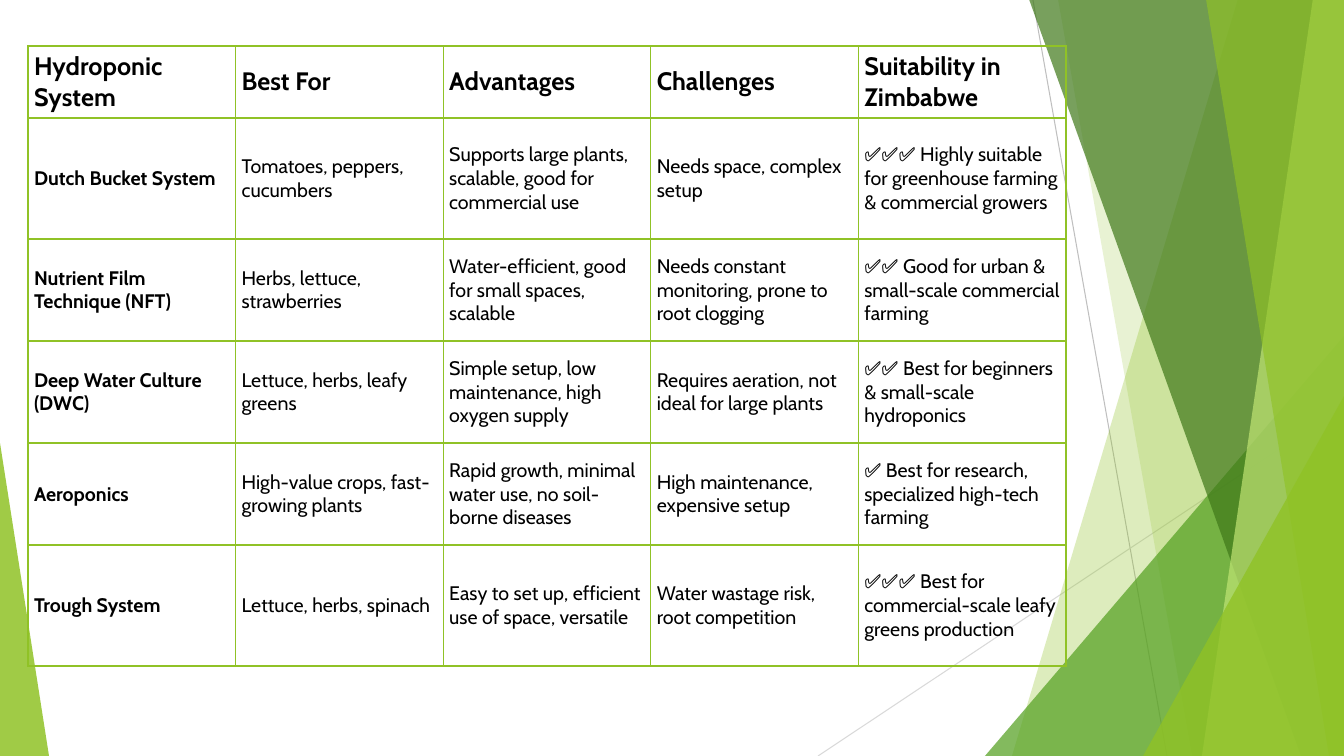
import dataclasses

import lxml.etree
import pptx
import pptx.dml.color
import pptx.enum.shapes
import pptx.enum.text
import pptx.oxml.ns
import pptx.util

WIDTH, HEIGHT = 1344, 756
EMU_PER_PX = 914400 / 100.8

SYSTEMS = [
    ["Hydroponic System", "Best For", "Advantages", "Challenges", "Suitability in Zimbabwe"],
    ["Dutch Bucket System", "Tomatoes, peppers, cucumbers",
     "Supports large plants, scalable, good for commercial use",
     "Needs space, complex setup",
     "✅✅✅ Highly suitable for greenhouse farming & commercial growers"],
    ["Nutrient Film Technique (NFT)", "Herbs, lettuce, strawberries",
     "Water-efficient, good for small spaces, scalable",
     "Needs constant monitoring, prone to root clogging",
     "✅✅ Good for urban & small-scale commercial farming"],
    ["Deep Water Culture (DWC)", "Lettuce, herbs, leafy greens",
     "Simple setup, low maintenance, high oxygen supply",
     "Requires aeration, not ideal for large plants",
     "✅✅ Best for beginners & small-scale hydroponics"],
    ["Aeroponics", "High-value crops, fast-growing plants",
     "Rapid growth, minimal water use, no soil-borne diseases",
     "High maintenance, expensive setup",
     "✅ Best for research, specialized high-tech farming"],
    ["Trough System", "Lettuce, herbs, spinach",
     "Easy to set up, efficient use of space, versatile",
     "Water wastage risk, root competition",
     "✅✅✅ Best for commercial-scale leafy greens production"],
]
ROW_HEIGHTS = [72, 121, 102, 102, 102, 121]


@dataclasses.dataclass(frozen=True)
class Theme:
    font: str = "Cabin"
    text: str = "000000"
    lime: str = "90C226"
    green: str = "54A021"
    forest: str = "3F7819"
    pale: str = "C0E474"
    grey: str = "BFBFBF"
    light_grey: str = "D9D9D9"
    header_size: int = 18
    body_size: int = 14
    rule: float = 0.75
    border: float = 1


def px(length):
    return pptx.util.Emu(round(length * EMU_PER_PX))


def rgb(color):
    return pptx.dml.color.RGBColor.from_string(color)


def add_element(parent, tag, **attributes):
    return lxml.etree.SubElement(parent, pptx.oxml.ns.qn(tag), **attributes)


class Painter:
    def __init__(self, page, theme):
        self.page = page
        self.theme = theme

    def line(self, x1, y1, x2, y2, color):
        line = self.page.shapes.add_connector(
            pptx.enum.shapes.MSO_CONNECTOR.STRAIGHT, px(x1), px(y1), px(x2), px(y2))
        line.line.color.rgb = rgb(color)
        line.line.width = pptx.util.Pt(self.theme.rule)
        add_element(line._element.spPr, "a:effectLst")

    def paint(self, shape, color, opacity):
        """Give a shape a see-through fill, no outline and no shadow."""
        shape.shadow.inherit = False
        shape.line.fill.background()
        shape.fill.solid()
        shape.fill.fore_color.rgb = rgb(color)
        swatch = shape._element.spPr.find(".//" + pptx.oxml.ns.qn("a:srgbClr"))
        add_element(swatch, "a:alpha", val=str(opacity * 1000))

    def blade(self, top, bottom, color, opacity):
        """Fill from a slanted left edge to the right side of the slide."""
        builder = self.page.shapes.build_freeform(top, -1, scale=EMU_PER_PX)
        builder.add_line_segments([(WIDTH, -1), (WIDTH, HEIGHT), (bottom, HEIGHT)], close=True)
        self.paint(builder.convert_to_shape(), color, opacity)

    def corner(self, left, top, width, apex, color, opacity):
        """Draw a triangle that stands on the bottom edge of the slide."""
        shape = self.page.shapes.add_shape(
            pptx.enum.shapes.MSO_SHAPE.ISOSCELES_TRIANGLE,
            px(left), px(top), px(width), px(HEIGHT - top))
        shape.adjustments[0] = apex
        self.paint(shape, color, opacity)

    def table(self, left, top, width, heights, rows):
        frame = self.page.shapes.add_table(
            len(rows), len(rows[0]), px(left), px(top), px(width), px(sum(heights)))
        table = frame.table
        table.first_row = table.horz_banding = False
        for column in table.columns:
            column.width = px(width / len(rows[0]))
        for r, (height, texts) in enumerate(zip(heights, rows)):
            table.rows[r].height = px(height)
            size = self.theme.body_size if r else self.theme.header_size
            for c, text in enumerate(texts):
                self.cell(table.cell(r, c), text, size, bold=r == 0 or c == 0)

    def cell(self, cell, text, size, bold):
        cell.margin_left = cell.margin_right = px(6)
        cell.margin_top = cell.margin_bottom = px(3)
        cell.vertical_anchor = pptx.enum.text.MSO_ANCHOR.MIDDLE
        cell.text_frame.text = text
        font = cell.text_frame.paragraphs[0].runs[0].font
        font.name = self.theme.font
        font.size = pptx.util.Pt(size)
        font.bold = bold
        font.color.rgb = rgb(self.theme.text)
        properties = cell._tc.get_or_add_tcPr()
        for side in ("a:lnL", "a:lnR", "a:lnT", "a:lnB"):
            border = add_element(properties, side, w=str(pptx.util.Pt(self.theme.border)))
            add_element(add_element(border, "a:solidFill"), "a:srgbClr", val=self.theme.lime)
        cell.fill.background()


def main():
    deck = pptx.Presentation()
    deck.slide_width, deck.slide_height = px(WIDTH), px(HEIGHT)
    theme = Theme()
    painter = Painter(deck.slides.add_slide(deck.slide_layouts[6]), theme)

    painter.line(1033, 0, 1167, HEIGHT, theme.grey)
    painter.line(WIDTH, 406, 818, HEIGHT, theme.light_grey)
    painter.blade(1238, 1012, theme.lime, 30)
    painter.blade(1058, 1192, theme.lime, 20)
    painter.corner(985, 336, 359, 1, theme.green, 72)
    painter.blade(1029, 1301, theme.forest, 70)
    painter.blade(1313, 1202, theme.pale, 70)
    painter.blade(1206, 1329, theme.lime, 65)
    painter.corner(1143, 396, 201, 1, theme.lime, 80)
    painter.corner(0, 443, 49, 0, theme.lime, 85)
    painter.table(28, 46, 1038, ROW_HEIGHTS, SYSTEMS)

    deck.save("out.pptx")


if __name__ == "__main__":
    main()
